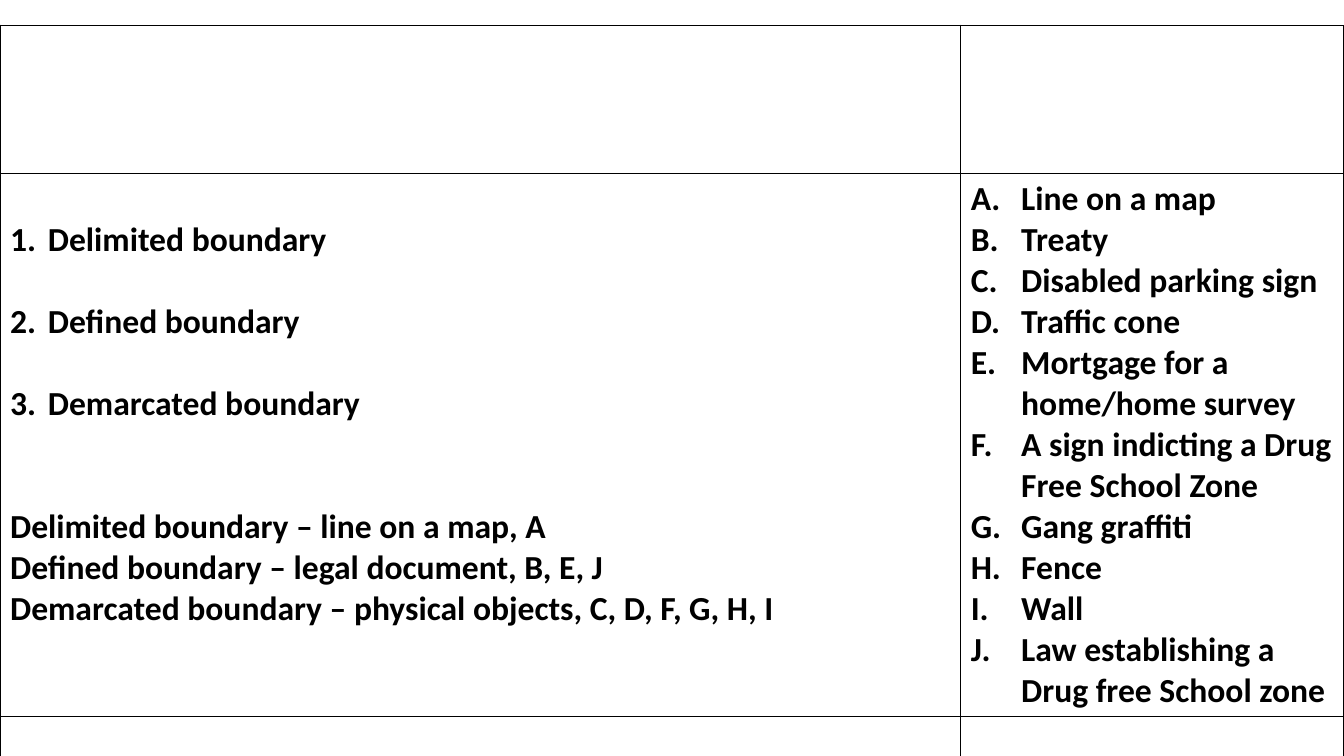
from lxml import etree
from pptx import Presentation
from pptx.dml.color import RGBColor
from pptx.oxml.ns import qn
from pptx.util import Pt

PX = 9525
COLORS = {"ink": "000000"}
FONT = {"name": "Calibri", "size": Pt(24), "bold": True}
COLS = [915, 365]
ROWS = [141, 493, 61]
SIDES = ["lnL", "lnR", "lnT", "lnB"]
TERMS = ["Delimited boundary", "Defined boundary", "Demarcated boundary"]
KEYS = [
    "Delimited boundary – line on a map, A",
    "Defined boundary – legal document, B, E, J",
    "Demarcated boundary – physical objects, C, D, F, G, H, I",
]
CLUES = [
    "Line on a map",
    "Treaty",
    "Disabled parking sign",
    "Traffic cone",
    "Mortgage for a home/home survey",
    "A sign indicting a Drug Free School Zone",
    "Gang graffiti",
    "Fence",
    "Wall",
    "Law establishing a Drug free School zone",
]


def px(count):
    """Turn pixels into EMU."""
    return count * PX


def add_ink(parent):
    """Add a solid ink fill to a line element."""
    fill = etree.SubElement(parent, qn("a:solidFill"))
    etree.SubElement(fill, qn("a:srgbClr"), val=COLORS["ink"])


def style_cell(cell):
    """Clear the fill of a cell and rule its four sides."""
    cell.fill.background()
    props = cell._tc.get_or_add_tcPr()
    for spot, side in enumerate(SIDES):
        line = etree.Element(qn("a:" + side), w=str(Pt(1)))
        add_ink(line)
        props.insert(spot, line)


def add_grid(slide):
    """Add the ruled table and return it."""
    frame = slide.shapes.add_table(
        len(ROWS), len(COLS), 0, px(24), px(sum(COLS)), px(sum(ROWS))
    )
    table = frame.table
    table.first_row = table.horz_banding = False
    for col, width in zip(table.columns, COLS):
        col.width = px(width)
    for row, height in zip(table.rows, ROWS):
        row.height = px(height)
    for cell in table.iter_cells():
        style_cell(cell)
    return table


def number(para, scheme, indent):
    """Give a paragraph an automatic number with a hanging indent."""
    props = para._p.get_or_add_pPr()
    props.set("marL", str(px(indent)))
    props.set("indent", str(-px(indent)))
    color = etree.SubElement(props, qn("a:buClr"))
    etree.SubElement(color, qn("a:srgbClr"), val=COLORS["ink"])
    etree.SubElement(props, qn("a:buAutoNum"), type=scheme)


def add_lines(cell, lines, scheme=None, indent=0, form=None):
    """Write lines into a cell and return their paragraphs."""
    frame = cell.text_frame
    paras = []
    for text in lines:
        first = frame.paragraphs[0]
        para = frame.add_paragraph() if first.runs else first
        if scheme:
            number(para, scheme, indent)
        for key, value in (form or {}).items():
            setattr(para, key, value)
        run = para.add_run()
        run.text = text
        for key, value in FONT.items():
            setattr(run.font, key, value)
        run.font.color.rgb = RGBColor.from_string(COLORS["ink"])
        paras.append(para)
    return paras


def main():
    """Build the slide and save it."""
    deck = Presentation()
    deck.slide_width, deck.slide_height = px(1280), px(720)
    slide = deck.slides.add_slide(deck.slide_layouts[6])
    table = add_grid(slide)
    left, right = table.cell(1, 0), table.cell(1, 1)
    add_lines(left, TERMS, "arabicPeriod", 36, {"line_spacing": 2.0})
    keys = add_lines(left, KEYS)
    keys[0].space_before = Pt(58.6)
    add_lines(right, CLUES, "alphaUcPeriod", 48)
    deck.save("out.pptx")


if __name__ == "__main__":
    main()
